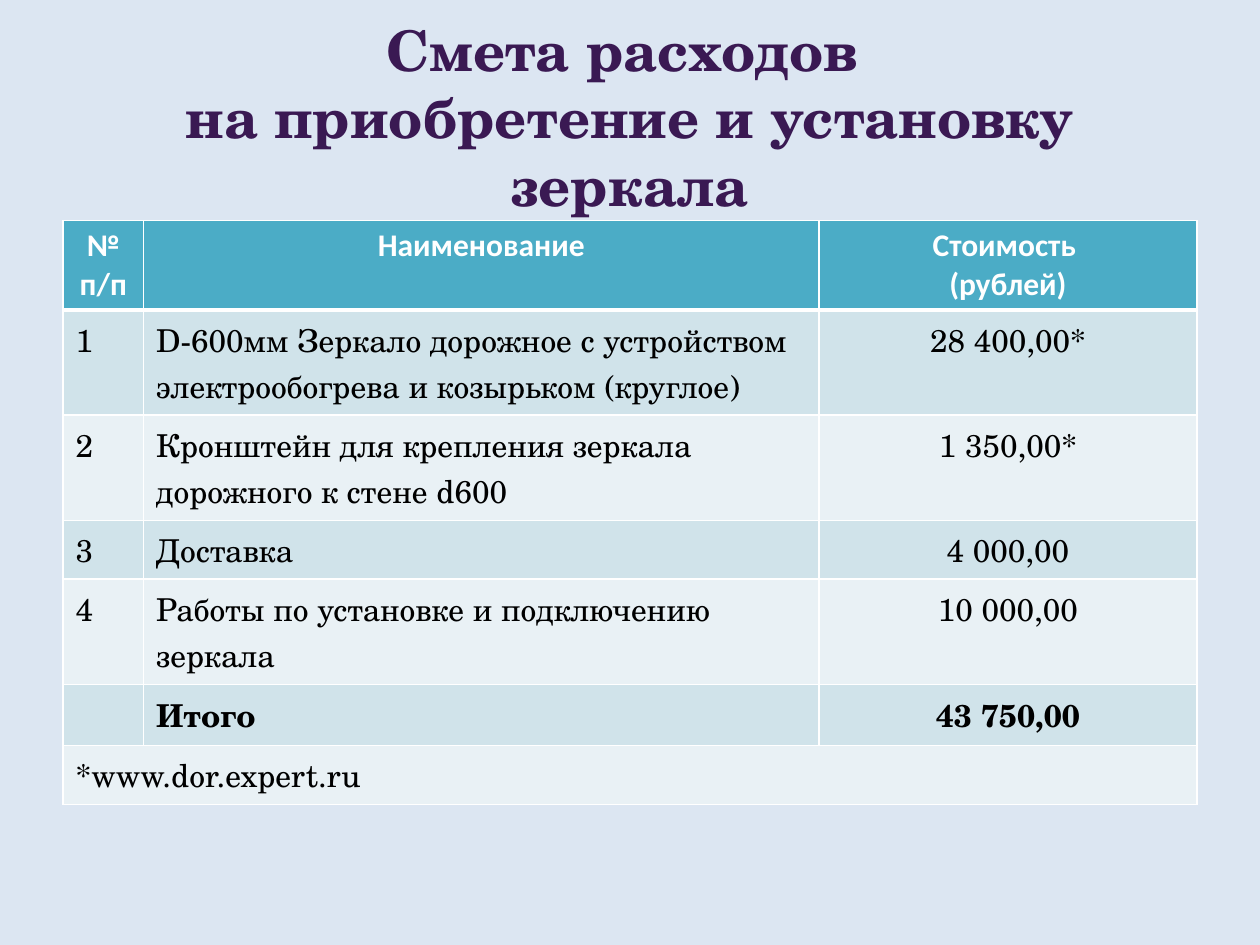
from dataclasses import dataclass

from lxml import etree
from pptx import Presentation, util as u
from pptx.dml.color import RGBColor
from pptx.enum import text
from pptx.oxml import ns


@dataclass(frozen=True)
class Theme:
    background: str = "DCE6F2"
    title: str = "3A1953"
    header: str = "4BACC6"
    bands: tuple[str, str] = ("D0E3EA", "E9F1F5")
    light: str = "FFFFFF"
    dark: str = "000000"
    body_font: str = "TeX Gyre Schola"
    header_font: str = "Calibri"
    title_size: int = 32
    table_size: int = 18
    border: float = 1
    header_border: float = 3


@dataclass(frozen=True)
class Expense:
    number: str
    name: str
    cost: str
    bold: bool = False


THEME = Theme()
WIDTH, HEIGHT = u.Inches(10), u.Inches(7.5)
MARGIN = 0.05
COLUMN_SHARES = (0.064, 0.536, 0.3)
ROW_HEIGHT = u.Inches(0.41)
HEADINGS = ("№ п/п", "Наименование", "Стоимость \n(рублей)")
EXPENSES = (
    Expense("1", "D-600мм Зеркало дорожное с устройством электрообогрева и козырьком (круглое)", "28 400,00*"),
    Expense("2", "Кронштейн для крепления зеркала дорожного к стене d600", "1 350,00*"),
    Expense("3", "Доставка", "4 000,00"),
    Expense("4", "Работы по установке и подключению зеркала", "10 000,00"),
    Expense("", "Итого", "43 750,00", bold=True),
)
FOOTNOTE = "*www.dor.expert.ru"


def format_text(frame, font: str, size: float, color: str, bold: bool, centred: bool) -> None:
    for paragraph in frame.paragraphs:
        paragraph.alignment = text.PP_ALIGN.CENTER if centred else text.PP_ALIGN.LEFT
        for run in paragraph.runs:
            run.font.name = font
            run.font.size = u.Pt(size)
            run.font.bold = bold
            run.font.color.rgb = RGBColor.from_string(color)


def set_borders(cell, bottom: float) -> None:
    properties = cell._tc.get_or_add_tcPr()
    widths = {"a:lnL": THEME.border, "a:lnR": THEME.border, "a:lnT": THEME.border, "a:lnB": bottom}
    for position, (tag, width) in enumerate(widths.items()):
        line = etree.Element(ns.qn(tag), w=str(u.Pt(width)))
        fill = etree.SubElement(line, ns.qn("a:solidFill"))
        etree.SubElement(fill, ns.qn("a:srgbClr"), val=THEME.light)
        properties.insert(position, line)


def fill_cell(cell, content: str, fill: str, header: bool, bold: bool, centred: bool) -> None:
    cell.text_frame.text = content
    cell.fill.solid()
    cell.fill.fore_color.rgb = RGBColor.from_string(fill)
    set_borders(cell, THEME.header_border if header else THEME.border)
    font = THEME.header_font if header else THEME.body_font
    color = THEME.light if header else THEME.dark
    format_text(cell.text_frame, font, THEME.table_size, color, bold, centred)


def add_title(slide) -> None:
    title = slide.shapes.title
    title.left, title.top = int(WIDTH * MARGIN), int(HEIGHT * 0.04)
    title.width, title.height = int(WIDTH * (1 - 2 * MARGIN)), u.Inches(1.25)
    frame = title.text_frame
    frame.text = "Смета расходов \vна приобретение и установку зеркала"
    frame.vertical_anchor = text.MSO_ANCHOR.MIDDLE
    format_text(frame, THEME.body_font, THEME.title_size, THEME.title, True, True)


def add_estimate(slide) -> None:
    row_count = len(EXPENSES) + 2
    table = slide.shapes.add_table(
        row_count, len(COLUMN_SHARES), int(WIDTH * MARGIN), u.Inches(1.75),
        int(WIDTH * (1 - 2 * MARGIN)), ROW_HEIGHT * row_count,
    ).table
    for column, share in zip(table.columns, COLUMN_SHARES):
        column.width = int(WIDTH * share)
    for index, heading in enumerate(HEADINGS):
        fill_cell(table.cell(0, index), heading, THEME.header, True, True, True)
    for row, expense in enumerate(EXPENSES, start=1):
        for index, content in enumerate((expense.number, expense.name, expense.cost)):
            band = THEME.bands[(row - 1) % 2]
            fill_cell(table.cell(row, index), content, band, False, expense.bold, index == 2)
    last = row_count - 1
    table.cell(last, 0).merge(table.cell(last, 2))
    for index, content in enumerate((FOOTNOTE, "", "")):
        fill_cell(table.cell(last, index), content, THEME.bands[(last - 1) % 2], False, False, False)


def main() -> None:
    presentation = Presentation()
    presentation.slide_width, presentation.slide_height = WIDTH, HEIGHT
    slide = presentation.slides.add_slide(presentation.slide_layouts[5])
    slide.background.fill.solid()
    slide.background.fill.fore_color.rgb = RGBColor.from_string(THEME.background)
    add_title(slide)
    add_estimate(slide)
    presentation.save("out.pptx")


if __name__ == "__main__":
    main()
